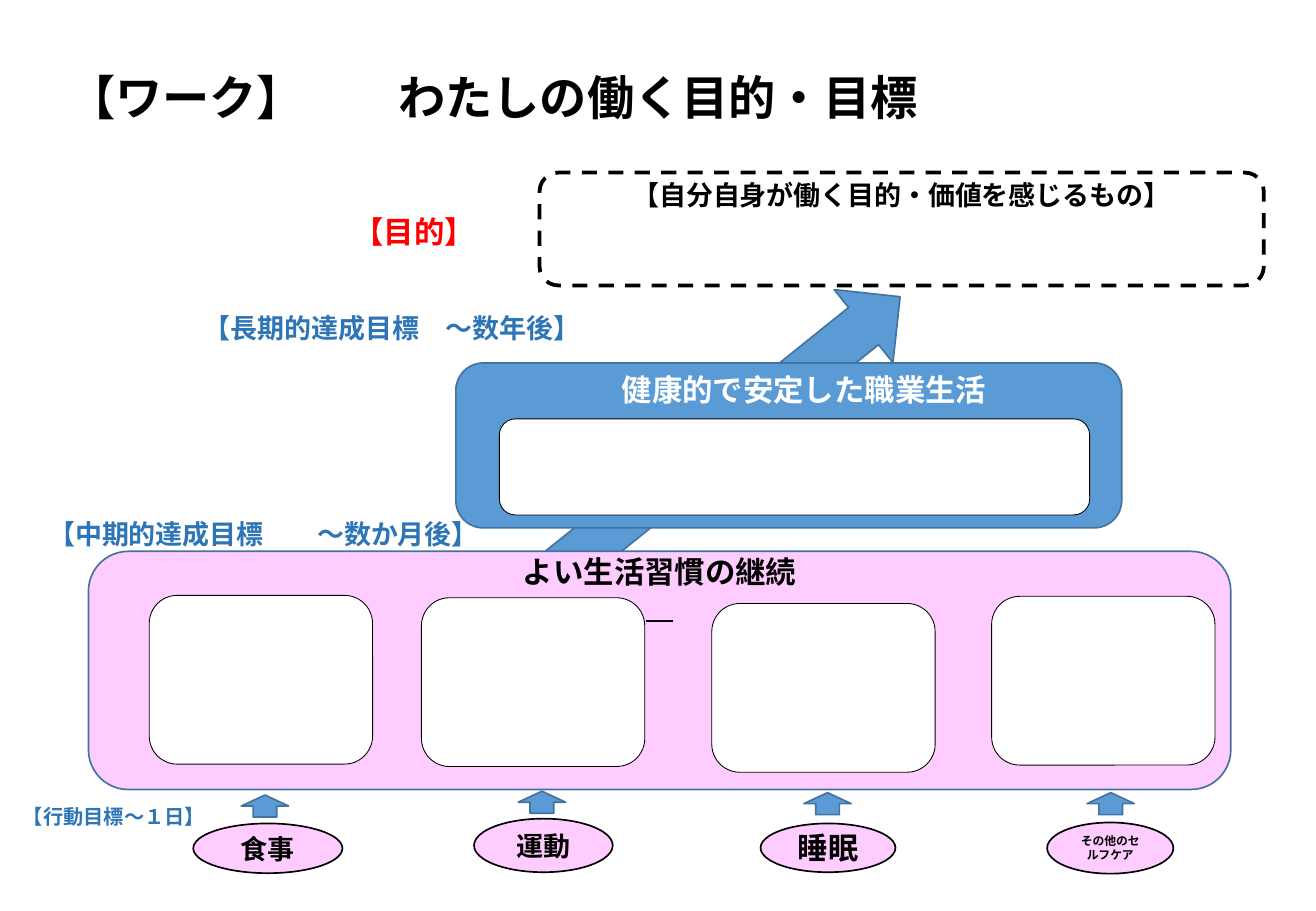
import pptx
import pptx.dml.color
import pptx.enum.dml
import pptx.enum.shapes
import pptx.enum.text
import pptx.oxml.ns
import pptx.util
from lxml import etree

Cm = pptx.util.Cm
Pt = pptx.util.Pt
qn = pptx.oxml.ns.qn
SHAPES = pptx.enum.shapes.MSO_SHAPE
ANCHOR = pptx.enum.text.MSO_ANCHOR
ALIGN = pptx.enum.text.PP_ALIGN

FONT = "Noto Sans CJK JP"
COLORS = {
    "black": "000000",
    "white": "FFFFFF",
    "blue": "5B9BD5",
    "blue edge": "43739E",
    "label blue": "2E75B6",
    "red": "FF0000",
    "pink": "FFCCFF",
}

# Text, size, colour, left, top, width, height
LABELS = [
    ("【行動目標～１日】", 12, "label blue", 0.23, 16.69, 4.32, 0.76),
    ("【長期的達成目標　～数年後】", 16, "label blue", 4.01, 6.4, 9.17, 0.94),
    ("【目的】", 18, "red", 7.14, 4.34, 3.91, 1.02),
    ("【中期的達成目標　　～数か月後】", 16, "label blue", 0.76, 10.69, 13.11, 0.94),
]

# Habit, text size, oval bounds, arrow position, answer box position
HABITS = [
    ("食事", 16, (4.04, 17.22, 3.12, 1.04), (5.31, 16.36), (3.12, 12.45)),
    ("運動", 16, (9.91, 17.12, 2.9, 1.12), (11.1, 16.28), (8.81, 12.5)),
    ("睡眠", 18, (15.9, 17.22, 2.82, 1.02), (17.07, 16.31), (14.88, 12.62)),
    ("その他のセルフケア", 7, (21.89, 17.2, 2.64, 1.07), (22.99, 16.31), (20.73, 12.47)),
]
ARROW_SIZE = (0.46, 0.99)
ANSWER_SIZE = (4.67, 3.53)


def rgb(color):
    return pptx.dml.color.RGBColor.from_string(COLORS[color])


class Worksheet:
    """Holds the presentation, its slide and the shared text style."""

    def __init__(self, width, height):
        self.presentation = pptx.Presentation()
        self.presentation.slide_width = Cm(width)
        self.presentation.slide_height = Cm(height)
        layout = self.presentation.slide_layouts[5]
        self.slide = self.presentation.slides.add_slide(layout)

    def set_text(self, shape, text, size, color="black", align=ALIGN.CENTER):
        paragraph = shape.text_frame.paragraphs[0]
        paragraph.text = text
        paragraph.alignment = align
        font = paragraph.font
        font.name = FONT
        font.size = Pt(size)
        font.bold = True
        font.color.rgb = rgb(color)
        properties = paragraph._p.pPr.find(qn("a:defRPr"))
        etree.SubElement(properties, qn("a:ea"), typeface=FONT)
        return paragraph

    def title(self, text, size, bounds):
        title = self.slide.shapes.title
        title.left, title.top, title.width, title.height = map(Cm, bounds)
        title.text_frame.auto_size = pptx.enum.text.MSO_AUTO_SIZE.NONE
        title.text_frame.vertical_anchor = ANCHOR.MIDDLE
        self.set_text(title, text, size, align=ALIGN.LEFT).line_spacing = 0.9

    def label(self, text, size, color, *bounds):
        box = self.slide.shapes.add_textbox(*map(Cm, bounds))
        box.text_frame.word_wrap = True
        self.set_text(box, text, size, color, ALIGN.LEFT)

    def shape(self, kind, bounds, fill, line="black", weight=1, rotation=0):
        shape = self.slide.shapes.add_shape(kind, *map(Cm, bounds))
        shape.shadow.inherit = False
        shape.fill.solid()
        shape.fill.fore_color.rgb = rgb(fill)
        shape.line.color.rgb = rgb(line)
        shape.line.width = Pt(weight)
        shape.rotation = rotation
        return shape

    def panel(self, heading, size, bounds, fill, line, color="black", weight=1):
        """Add a rounded panel with its heading along the top edge."""
        panel = self.shape(SHAPES.ROUNDED_RECTANGLE, bounds, fill, line, weight)
        panel.text_frame.vertical_anchor = ANCHOR.TOP
        panel.text_frame.margin_top = 0
        self.set_text(panel, heading, size, color)
        return panel

    def answer_box(self, bounds):
        self.shape(SHAPES.ROUNDED_RECTANGLE, bounds, "white", weight=0.5)

    def rule(self, left, right, y):
        straight = pptx.enum.shapes.MSO_CONNECTOR.STRAIGHT
        rule = self.slide.shapes.add_connector(straight, Cm(left), Cm(y), Cm(right), Cm(y))
        rule.line.color.rgb = rgb("black")
        rule.line.width = Pt(1.25)
        etree.SubElement(rule._element.spPr, qn("a:effectLst"))


def main():
    sheet = Worksheet(27.51, 19.05)
    sheet.title("【ワーク】　　わたしの働く目的・目標", 28, (1.17, 0.61, 25.2, 2.97))

    growth_arrow = sheet.shape(
        SHAPES.UP_ARROW, (13.69, 4.22, 1.96, 10.64), "blue", "blue edge", rotation=51.2
    )
    growth_arrow.adjustments[0] = 0.51

    habits_panel = sheet.panel(
        "よい生活習慣の継続", 18, (1.85, 11.53, 23.88, 4.98), "pink", "blue edge"
    )
    habits_panel.text_frame.paragraphs[0].line_spacing = 0.7
    sheet.rule(13.51, 14.07, 12.98)

    sheet.panel(
        "　健康的で安定した職業生活", 18, (9.53, 7.59, 13.92, 3.45),
        "blue", "blue edge", "white",
    )
    sheet.answer_box((10.44, 8.76, 12.34, 2.01))

    purpose_panel = sheet.panel(
        "【自分自身が働く目的・価値を感じるもの】", 16, (11.28, 3.61, 15.14, 2.36),
        "white", "black", weight=2.25,
    )
    purpose_panel.line.dash_style = pptx.enum.dml.MSO_LINE.DASH

    for habit, size, oval_bounds, arrow_position, answer_position in HABITS:
        oval = sheet.shape(SHAPES.OVAL, oval_bounds, "pink")
        oval.text_frame.vertical_anchor = ANCHOR.MIDDLE
        sheet.set_text(oval, habit, size)
        sheet.shape(
            SHAPES.RIGHT_ARROW, arrow_position + ARROW_SIZE, "blue", "blue edge", rotation=270
        )
        sheet.answer_box(answer_position + ANSWER_SIZE)

    for label in LABELS:
        sheet.label(*label)

    sheet.presentation.save("out.pptx")


if __name__ == "__main__":
    main()
